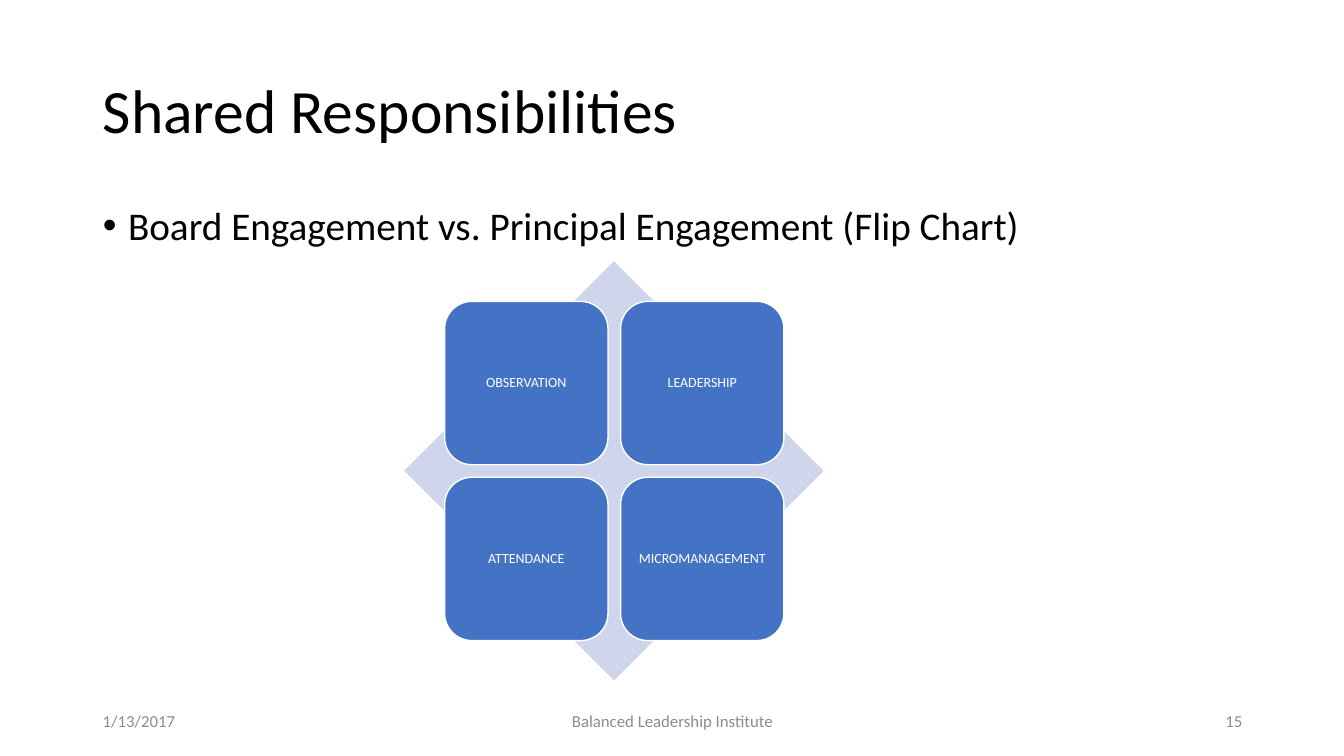
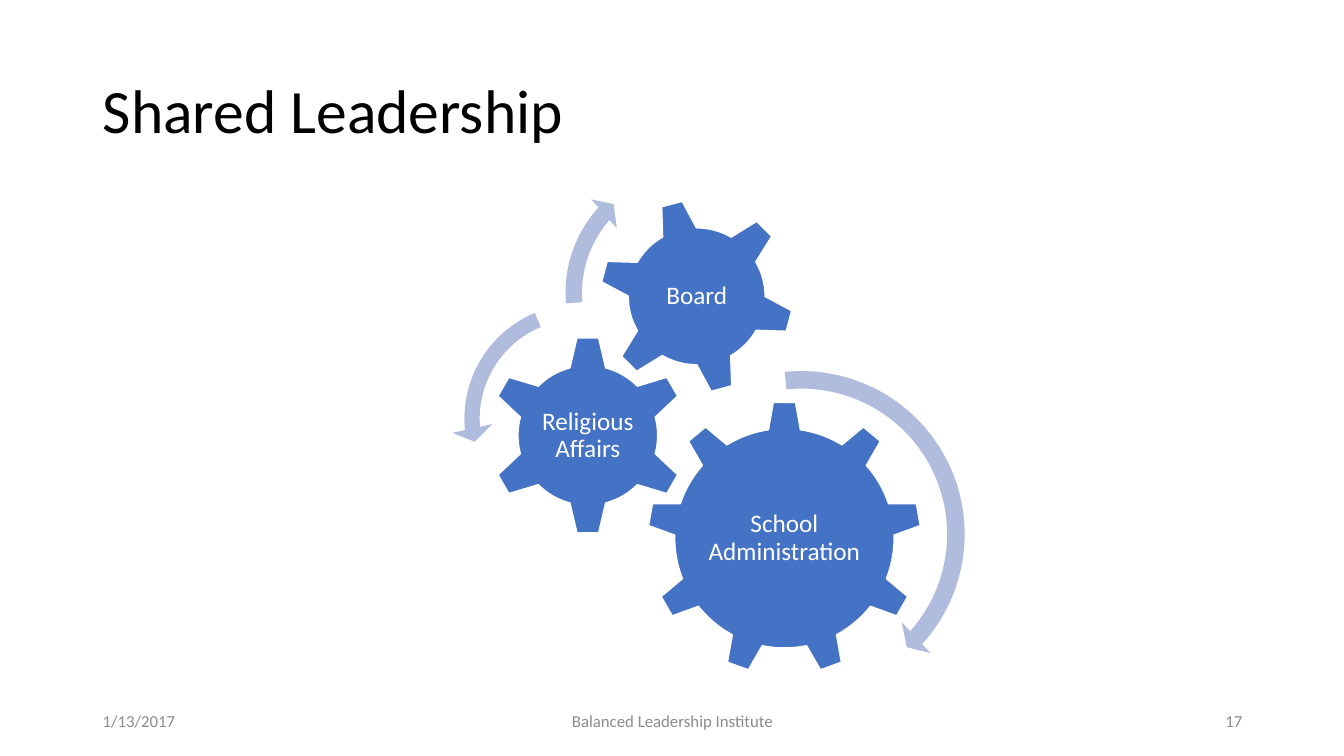
"""Build two slides on shared responsibilities and shared leadership."""
from dataclasses import dataclass

from pptx import Presentation
from pptx import util as u
from pptx.dml.color import RGBColor
from pptx.enum import shapes, text
from pptx.oxml import parse_xml
from pptx.oxml.ns import nsdecls
from pptx.shapes.autoshape import Shape
from pptx.shapes.shapetree import GroupShapes
from pptx.slide import Slide
from pptx.text.text import TextFrame

COLORS = {
    "black": "000000",
    "white": "FFFFFF",
    "footer": "8C8C8C",
    "blue": "4472C4",
    "diamond": "CFD5EA",
    "arrow": "B0BCDE",
}
FONT = "Calibri"
Kind = shapes.MSO_SHAPE
Align = text.PP_ALIGN
Anchor = text.MSO_ANCHOR


@dataclass(frozen=True)
class Footer:
    left: float
    width: float
    align: Align


@dataclass(frozen=True)
class Gear:
    label: str
    kind: Kind
    left: float
    top: float
    size: float
    label_width: float
    rotation: float = 0


@dataclass(frozen=True)
class TurnArrow:
    kind: Kind
    left: float
    top: float
    size: float
    adjustments: tuple[float, ...]


DATE = Footer(0.92, 3, Align.LEFT)
INSTITUTE = Footer(4.42, 4.5, Align.CENTER)
NUMBER = Footer(9.42, 3, Align.RIGHT)

DUTIES = ("OBSERVATION", "LEADERSHIP", "ATTENDANCE", "MICROMANAGEMENT")

GEARS = (
    Gear("School Administration", Kind.GEAR_9, 6.42, 3.98, 2.72, 1.63),
    Gear("Religious Affairs", Kind.GEAR_6, 4.84, 3.33, 1.98, 0.98),
    Gear("Board", Kind.GEAR_6, 5.94, 1.97, 1.94, 1.09, 345),
)
TURN_ARROWS = (
    TurnArrow(Kind.CIRCULAR_ARROW, 6.21, 3.56, 3.48,
              (0.05, 2.99, 25.24, 158.45, 0.06)),
    TurnArrow(Kind.LEFT_CIRCULAR_ARROW, 4.48, 2.89, 2.53,
              (0.06, 4.3, 104.89, 148.38, 0.08)),
    TurnArrow(Kind.CIRCULAR_ARROW, 5.5, 1.54, 2.73,
              (0.06, 3.94, 133.14, 105.08, 0.07)),
)


def write(frame: TextFrame, words: str, *, size: float, color: str = "black",
          align: Align = Align.LEFT, anchor: Anchor = Anchor.MIDDLE,
          line_spacing: float = 0.9, space_before: float = 0,
          inset: float | None = None) -> None:
    frame.word_wrap = True
    frame.auto_size = text.MSO_AUTO_SIZE.NONE
    frame.vertical_anchor = anchor
    if inset is not None:
        frame.margin_left = frame.margin_right = u.Inches(inset)
        frame.margin_top = frame.margin_bottom = u.Inches(inset)
    paragraph = frame.paragraphs[0]
    paragraph.alignment = align
    paragraph.line_spacing = line_spacing
    paragraph.space_before = u.Pt(space_before)
    run = paragraph.add_run()
    run.text = words
    run.font.name = FONT
    run.font.size = u.Pt(size)
    run.font.color.rgb = RGBColor.from_string(COLORS[color])


def place(part: Shape, left: float, top: float, width: float, height: float) -> None:
    part.left, part.top = u.Inches(left), u.Inches(top)
    part.width, part.height = u.Inches(width), u.Inches(height)


def add_square_shape(diagram: GroupShapes, kind: Kind, left: float, top: float,
                     size: float, fill: str, outline: str | None = None) -> Shape:
    part = diagram.add_shape(kind, u.Inches(left), u.Inches(top),
                             u.Inches(size), u.Inches(size))
    part.shadow.inherit = False
    part.fill.solid()
    part.fill.fore_color.rgb = RGBColor.from_string(COLORS[fill])
    if outline:
        part.line.color.rgb = RGBColor.from_string(COLORS[outline])
        part.line.width = u.Pt(1)
    else:
        part.line.fill.background()
    return part


def add_footer(slide: Slide, footer: Footer, words: str) -> None:
    box = slide.shapes.add_textbox(u.Inches(footer.left), u.Inches(6.95),
                                   u.Inches(footer.width), u.Inches(0.4))
    write(box.text_frame, words, size=12, color="footer", align=footer.align,
          line_spacing=1)


def start_slide(deck: Presentation, layout: int, title: str, number: int) -> Slide:
    slide = deck.slides.add_slide(deck.slide_layouts[layout])
    place(slide.shapes.title, 0.92, 0.4, 11.5, 1.45)
    write(slide.shapes.title.text_frame, title, size=44)
    add_footer(slide, DATE, "1/13/2017")
    add_footer(slide, INSTITUTE, "Balanced Leadership Institute")
    add_footer(slide, NUMBER, str(number))
    return slide


def add_bullet(slide: Slide, words: str) -> None:
    body = slide.placeholders[1]
    place(body, 0.92, 2, 11.5, 4.76)
    write(body.text_frame, words, size=28, anchor=Anchor.TOP, space_before=10)
    properties = body.text_frame.paragraphs[0]._p.get_or_add_pPr()
    properties.set("marL", str(u.Inches(0.25)))
    properties.set("indent", str(u.Inches(-0.25)))
    properties.append(parse_xml(f'<a:buFont {nsdecls("a")} typeface="Arial"/>'))
    properties.append(parse_xml(f'<a:buChar {nsdecls("a")} char="•"/>'))


def add_duty_matrix(slide: Slide) -> None:
    left, top, size = 4.01, 2.59, 4.16
    margin, tile, step = 0.4, 1.62, 1.745
    diagram = slide.shapes.add_group_shape().shapes
    add_square_shape(diagram, Kind.DIAMOND, left, top, size, "diamond")
    for index, duty in enumerate(DUTIES):
        row, column = divmod(index, 2)
        card = add_square_shape(diagram, Kind.ROUNDED_RECTANGLE,
                                left + margin + column * step,
                                top + margin + row * step, tile, "blue", "white")
        write(card.text_frame, duty, size=10, color="white",
              align=Align.CENTER, inset=0.04)


def add_gear(diagram: GroupShapes, gear: Gear) -> None:
    wheel = add_square_shape(diagram, gear.kind, gear.left, gear.top, gear.size,
                             "blue", "white")
    wheel.rotation = gear.rotation
    offset = (gear.size - gear.label_width) / 2
    label = diagram.add_textbox(u.Inches(gear.left + offset),
                                u.Inches(gear.top + offset),
                                u.Inches(gear.label_width),
                                u.Inches(gear.label_width))
    write(label.text_frame, gear.label, size=18, color="white",
          align=Align.CENTER, inset=0.03)


def add_turn_arrow(diagram: GroupShapes, arrow: TurnArrow) -> None:
    curve = add_square_shape(diagram, arrow.kind, arrow.left, arrow.top,
                             arrow.size, "arrow")
    for index, value in enumerate(arrow.adjustments):
        curve.adjustments[index] = value


def main() -> None:
    deck = Presentation()
    deck.slide_width, deck.slide_height = u.Inches(13.33), u.Inches(7.5)

    responsibilities = start_slide(deck, 1, "Shared Responsibilities", 15)
    add_bullet(responsibilities,
               "Board Engagement vs. Principal Engagement (Flip Chart)")
    add_duty_matrix(responsibilities)

    leadership = start_slide(deck, 5, "Shared Leadership", 17)
    gear_train = leadership.shapes.add_group_shape().shapes
    for gear in GEARS:
        add_gear(gear_train, gear)
    for arrow in TURN_ARROWS:
        add_turn_arrow(gear_train, arrow)

    deck.save("out.pptx")


if __name__ == "__main__":
    main()
